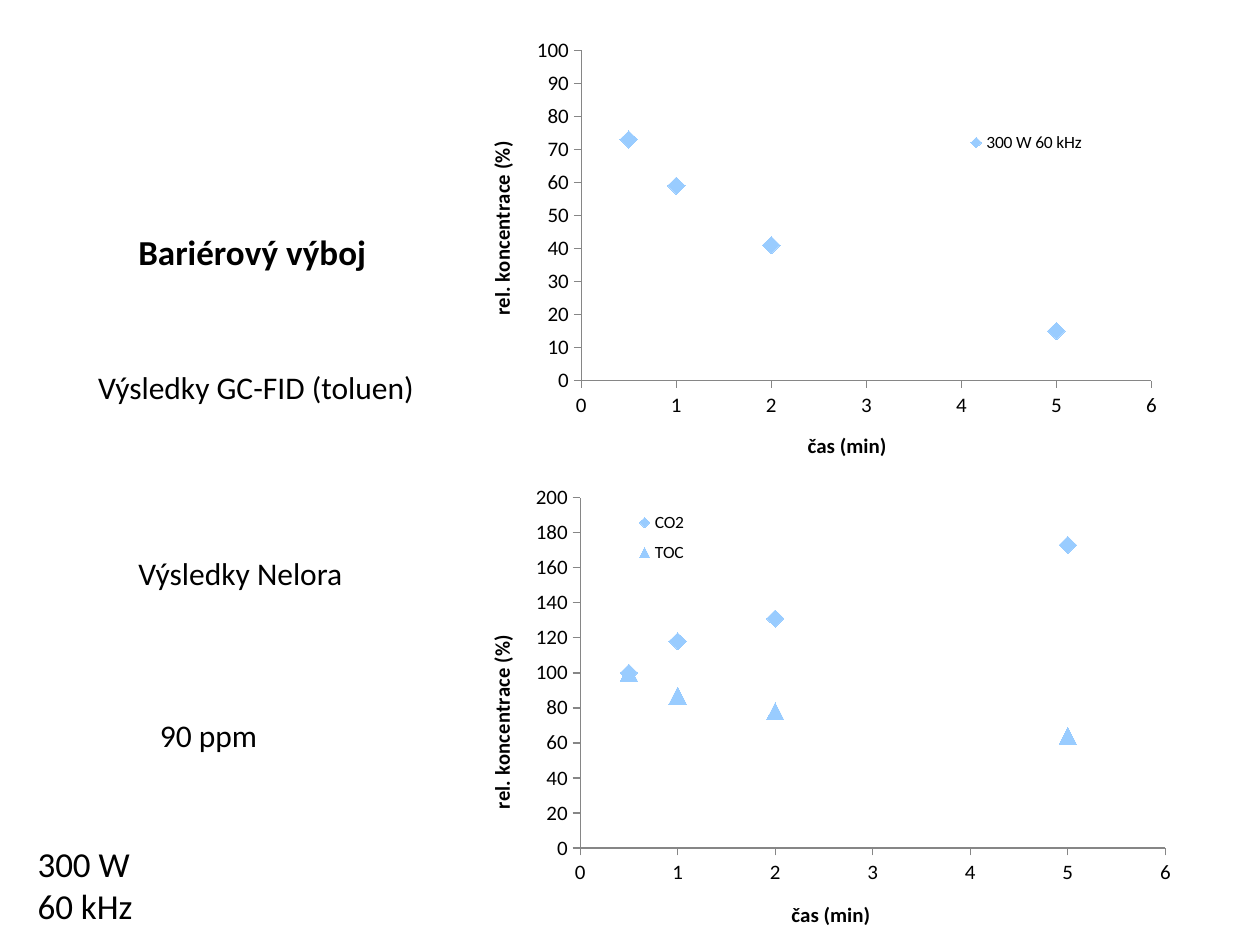
from dataclasses import dataclass

from lxml import etree
from pptx import Presentation
from pptx.chart.data import XyChartData
from pptx.dml.color import RGBColor
from pptx.enum.chart import XL_CHART_TYPE, XL_LEGEND_POSITION, XL_MARKER_STYLE, XL_TICK_MARK
from pptx.enum.text import MSO_AUTO_SIZE
from pptx.oxml.ns import qn
from pptx.util import Inches, Pt

SCATTER = XL_CHART_TYPE.XY_SCATTER
RIGHT = XL_LEGEND_POSITION.RIGHT
DIAMOND = XL_MARKER_STYLE.DIAMOND
TRIANGLE = XL_MARKER_STYLE.TRIANGLE
OUT, NONE = XL_TICK_MARK.OUTSIDE, XL_TICK_MARK.NONE
GROW = MSO_AUTO_SIZE.SHAPE_TO_FIT_TEXT


@dataclass(frozen=True)
class Theme:
    face: str = "Calibri"
    ink: RGBColor = RGBColor(0, 0, 0)
    mark: RGBColor = RGBColor(0x99, 0xCC, 0xFF)
    axis: RGBColor = RGBColor(0x86, 0x86, 0x86)
    head: int = 20
    body: int = 18
    label: int = 12
    key: int = 10


THEME = Theme()
TIMES = (0.5, 1, 2, 5)


def set_all(item, values):
    for name, value in values.items():
        setattr(item, name, value)


def set_font(font, size, bold=False):
    set_all(font, {"name": THEME.face, "size": Pt(size), "bold": bold})
    font.color.rgb = THEME.ink


def add_text(slide, box, lines, size, bold=False):
    frame = slide.shapes.add_textbox(*map(Inches, box)).text_frame
    set_all(frame, {"word_wrap": False, "auto_size": GROW, "text": "\n".join(lines)})
    for para in frame.paragraphs:
        set_font(para.runs[0].font, size, bold)


def place(part, spot, inner=False):
    """Give a chart part a fixed place, as fractions of the chart."""
    layout = part.find(qn("c:layout"))
    if layout is None:
        layout = etree.Element(qn("c:layout"))
        mark = part.find(qn("c:overlay"))
        if mark is None:
            part.insert(0, layout)
        else:
            mark.addprevious(layout)
    manual = etree.SubElement(layout, qn("c:manualLayout"))
    values = {"layoutTarget": "inner"} if inner else {}
    values.update(xMode="edge", yMode="edge")
    values.update(zip("xywh", spot))
    for name, value in values.items():
        etree.SubElement(manual, qn("c:" + name)).set("val", str(value))


def style_axis(axis, title, spot, top, step):
    set_all(axis, {
        "minimum_scale": 0, "maximum_scale": top, "major_unit": step,
        "has_major_gridlines": False,
        "major_tick_mark": OUT, "minor_tick_mark": NONE,
    })
    axis.format.line.color.rgb = THEME.axis
    set_font(axis.tick_labels.font, THEME.label)
    frame = axis.axis_title.text_frame
    frame.text = title
    set_font(frame.paragraphs[0].runs[0].font, THEME.label, True)
    place(axis.axis_title._element, spot)


def style_series(series, shape):
    series.format.line.fill.background()
    set_all(series.marker, {"style": shape, "size": 10})
    form = series.marker.format
    form.fill.solid()
    form.fill.fore_color.rgb = THEME.mark
    form.line.fill.background()


def add_scatter(slide, box, rows, top, step, spots):
    data = XyChartData()
    for name, values, _ in rows:
        series = data.add_series(name)
        for time, value in zip(TIMES, values):
            series.add_data_point(time, value)
    chart = slide.shapes.add_chart(SCATTER, *map(Inches, box), data).chart
    set_all(chart, {"has_title": False, "has_legend": True})
    set_font(chart.font, THEME.key)

    # Axes and points
    style_axis(chart.category_axis, "čas (min)", spots["time"], 6, 1)
    style_axis(chart.value_axis, "rel. koncentrace (%)", spots["level"], top, step)
    for series, (_, _, shape) in zip(chart.plots[0].series, rows):
        style_series(series, shape)

    # Legend and plot area
    set_all(chart.legend, {"position": RIGHT, "include_in_layout": False})
    set_font(chart.legend.font, THEME.key)
    place(chart.legend._element, spots["legend"])
    place(chart._chartSpace.find(".//" + qn("c:plotArea")), spots["plot"], True)


def main():
    deck = Presentation()
    set_all(deck, {"slide_width": Inches(10), "slide_height": Inches(7.5)})
    slide = deck.slides.add_slide(deck.slide_layouts[6])

    # Captions on the left
    add_text(slide, (1, 1.78, 2.03, 0.44), ["Bariérový výboj"], THEME.head, True)
    for box, line in (
        ((0.68, 2.87, 2.74, 0.4), "Výsledky GC-FID (toluen)"),
        ((1, 4.35, 1.85, 0.4), "Výsledky Nelora"),
        ((1.17, 5.63, 0.98, 0.4), "90 ppm"),
    ):
        add_text(slide, box, [line], THEME.body)
    add_text(slide, (0.2, 6.64, 0.97, 0.77), ["300 W", "60 kHz"], THEME.head)

    # Carbon dioxide and total carbon results
    add_scatter(
        slide, (3.84, 3.81, 5.88, 3.6),
        [("CO2", (100, 118, 131, 173), DIAMOND), ("TOC", (100, 87, 78, 64), TRIANGLE)],
        200, 20,
        {"plot": (0.13, 0.04, 0.79, 0.79), "legend": (0.19, 0.05, 0.1, 0.16),
         "time": (0.41, 0.94), "level": (0, 0.35)},
    )

    # Toluene results
    add_scatter(
        slide, (3.84, 0.23, 5.52, 3.46),
        [("300 W 60 kHz", (73, 59, 41, 15), DIAMOND)],
        100, 10,
        {"plot": (0.14, 0.05, 0.82, 0.77), "legend": (0.68, 0.23, 0.2, 0.07),
         "time": (0.46, 0.93), "level": (0, 0.26)},
    )
    deck.save("out.pptx")


if __name__ == "__main__":
    main()
